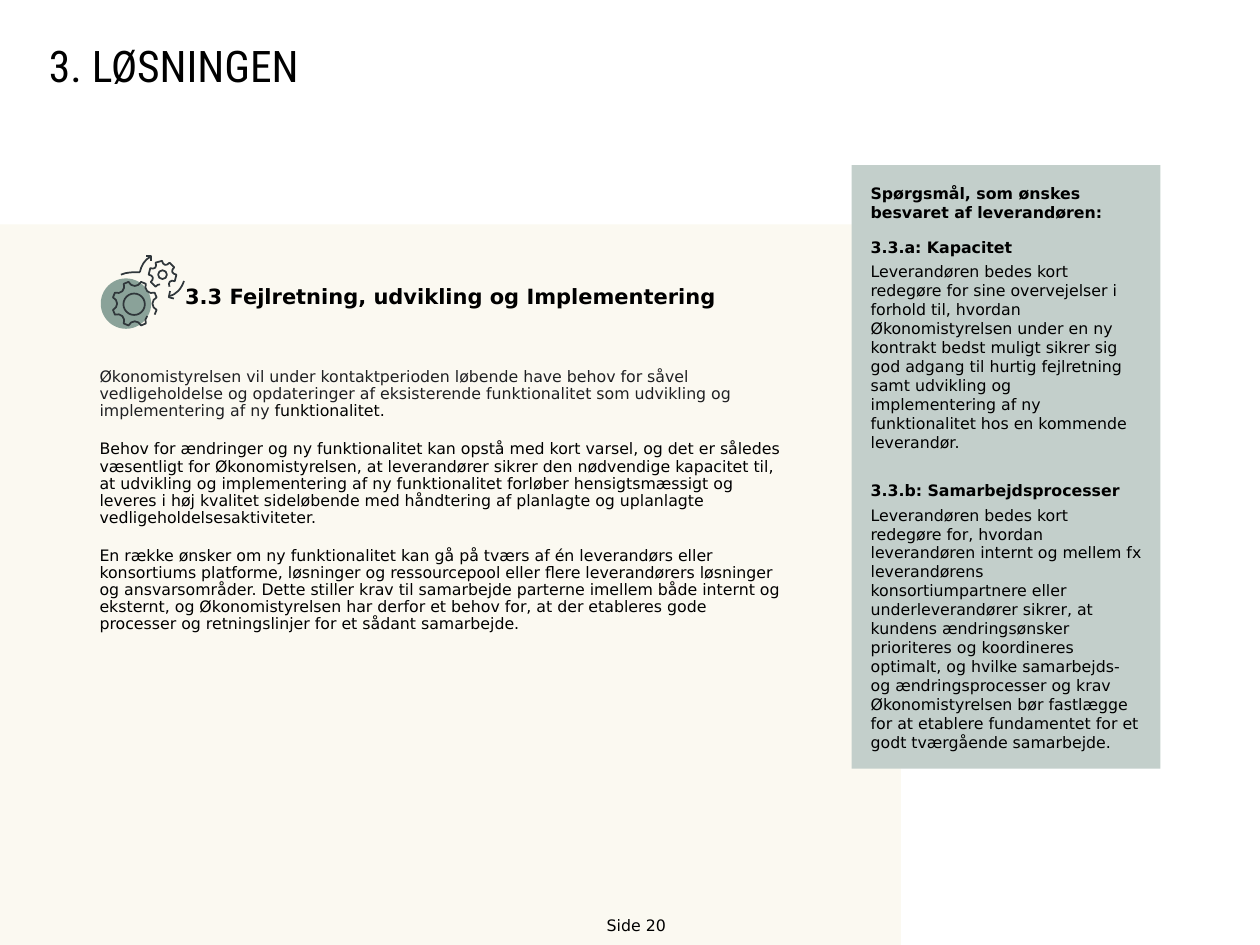
from math import cos, radians, sin

from lxml.etree import SubElement
from pptx import Presentation
from pptx.dml.color import RGBColor
from pptx.enum.shapes import MSO_SHAPE as Shape
from pptx.enum.text import MSO_ANCHOR as Anchor, PP_ALIGN as Align
from pptx.oxml.ns import qn
from pptx.util import Inches, Pt

BLACK = RGBColor(0x00, 0x00, 0x00)
CHARCOAL = RGBColor(0x1F, 0x20, 0x23)
SLATE = RGBColor(0x30, 0x37, 0x3B)
CREAM = RGBColor(0xFB, 0xF9, 0xF1)
MIST = RGBColor(0xC3, 0xCF, 0xCB)
SAGE = RGBColor(0x8A, 0xA2, 0x99)
BODY_FONT = "DejaVu Sans"

deck = Presentation()
deck.slide_width = Inches(10)
deck.slide_height = Inches(7.5)
page = deck.slides.add_slide(deck.slide_layouts[6])


def add_panel(kind, left, top, width, height, fill=None):
    panel = page.shapes.add_shape(
        kind, Inches(left), Inches(top), Inches(width), Inches(height)
    )
    panel.shadow.inherit = False
    if fill is None:
        panel.fill.background()
        panel.line.color.rgb = SLATE
        panel.line.width = Pt(1)
    else:
        panel.fill.solid()
        panel.fill.fore_color.rgb = fill
        panel.line.fill.background()
    return panel


def add_text(box, texts, size, font=BODY_FONT, inset=0.0, anchor=Anchor.TOP):
    frame = box.text_frame
    frame.word_wrap = True
    frame.vertical_anchor = anchor
    frame.margin_left = frame.margin_right = Inches(inset)
    frame.margin_top = frame.margin_bottom = Inches(inset)
    for index, text in enumerate(texts):
        para = frame.paragraphs[0] if index == 0 else frame.add_paragraph()
        para.text = text
        para.alignment = Align.LEFT
        para.font.name = font
        para.font.size = Pt(size)
        para.font.color.rgb = BLACK
    return frame


add_panel(Shape.RECTANGLE, 0, 1.78, 7.15, 5.72, CREAM)

title = page.shapes.add_textbox(Inches(0.29), Inches(0.38), Inches(8.73), Inches(0.75))
title_frame = add_text(
    title, ["3. LØSNINGEN"], 24.9, "Roboto Condensed", 0.1, Anchor.BOTTOM
)
title_frame.margin_top = Inches(0)
title_frame.margin_bottom = Inches(0.43)
title_frame.paragraphs[0].line_spacing = 0.9

sidebar = add_panel(Shape.RECTANGLE, 6.76, 1.31, 2.45, 4.79, MIST)
questions = [
    ("Spørgsmål, som ønskes besvaret af leverandøren:", True, 0),
    ("3.3.a: Kapacitet", True, 6),
    (
        "Leverandøren bedes kort redegøre for sine overvejelser i forhold til, "
        "hvordan Økonomistyrelsen under en ny kontrakt bedst muligt sikrer sig god "
        "adgang til hurtig fejlretning samt udvikling og implementering af ny "
        "funktionalitet hos en kommende leverandør.",
        False,
        0,
    ),
    ("3.3.b: Samarbejdsprocesser", True, 14),
    (
        "Leverandøren bedes kort redegøre for, hvordan leverandøren internt og "
        "mellem fx leverandørens konsortiumpartnere eller underleverandører sikrer, "
        "at kundens ændringsønsker prioriteres og koordineres optimalt, og hvilke "
        "samarbejds- og ændringsprocesser og krav Økonomistyrelsen bør fastlægge "
        "for at etablere fundamentet for et godt tværgående samarbejde.",
        False,
        0,
    ),
]
sidebar_frame = add_text(sidebar, [text for text, _, _ in questions], 9, inset=0.15)
for para, (_, bold, gap) in zip(sidebar_frame.paragraphs, questions):
    para.font.bold = bold
    para.space_after = Pt(3)
    if gap:
        para.space_before = Pt(gap)

heading = page.shapes.add_textbox(Inches(1.47), Inches(2.25), Inches(4.34), Inches(0.2))
heading_frame = add_text(
    heading, ["3.3 Fejlretning, udvikling og Implementering"], 12, anchor=Anchor.MIDDLE
)
heading_frame.paragraphs[0].font.bold = True

add_panel(Shape.OVAL, 0.8, 2.21, 0.4, 0.4, SAGE)

gears = [
    (1.07, 2.41, 0.18, 0.14, 45, 45, 70),
    (1.29, 2.18, 0.11, 0.08, 60, -256, 49),
]
outlines = []
for center_x, center_y, outer, inner, pitch, start, count in gears:
    middle = (inner + outer) / 2
    tooth = [(0, inner), (8, inner), (15, middle), (16, outer), (pitch / 2 - 2, outer)]
    tooth += [(pitch - offset, radius) for offset, radius in reversed(tooth[1:])]
    outline = []
    for index in range(count):
        turn, step = divmod(index, len(tooth))
        offset, radius = tooth[step]
        angle = radians(start + turn * pitch + offset)
        outline.append((center_x + radius * cos(angle), center_y + radius * sin(angle)))
    outlines.append(outline)

hole = []
for index in range(13):
    turn, step = divmod(index, 3)
    angle = radians(turn * 90 + (0, 29, 61)[step])
    radius = 0.04 if step else 0.035
    hole.append((1.29 + radius * cos(angle), 2.18 + radius * sin(angle)))

strokes = [
    ([outlines[0]], True),
    ([outlines[1], hole], True),
    ([[(1.16, 2.03), (1.2, 2.03), (1.2, 2.07)]], False),
    ([[(1.38, 2.37), (1.34, 2.36), (1.35, 2.31)]], False),
    ([[(1.46, 2.23), (1.44, 2.29), (1.4, 2.34), (1.34, 2.35)]], True),
    ([[(1.11, 2.16), (1.12, 2.11), (1.15, 2.06), (1.19, 2.04)]], True),
    ([[(0.96, 2.18), (1, 2.16), (1.06, 2.16), (1.11, 2.16)]], True),
]
for contours, curved in strokes:
    builder = None
    for contour in contours:
        points = [(Inches(x), Inches(y)) for x, y in contour]
        if builder is None:
            builder = page.shapes.build_freeform(*points[0])
        else:
            builder.move_to(*points[0])
        builder.add_line_segments(points[1:], close=False)
    drawing = builder.convert_to_shape()
    drawing.shadow.inherit = False
    drawing.fill.background()
    drawing.line.color.rgb = SLATE
    drawing.line.width = Pt(1)
    if curved:
        segments = list(drawing.element.iter(qn("a:lnTo")))
        for first in range(0, len(segments), 3):
            trio = segments[first : first + 3]
            bezier = SubElement(trio[0].getparent(), qn("a:cubicBezTo"))
            trio[0].addprevious(bezier)
            for segment in trio:
                bezier.append(segment[0])
                segment.getparent().remove(segment)

add_panel(Shape.OVAL, 0.98, 2.33, 0.17, 0.17)

footer = page.shapes.add_textbox(Inches(4.51), Inches(7.22), Inches(1.08), Inches(0.28))
footer_frame = add_text(footer, ["Side 20"], 9, inset=0.05)
footer_frame.paragraphs[0].alignment = Align.CENTER

body = page.shapes.add_textbox(Inches(0.79), Inches(2.93), Inches(5.42), Inches(2.63))
body_frame = add_text(
    body,
    [
        "Økonomistyrelsen vil under kontaktperioden løbende have behov for såvel "
        "vedligeholdelse og opdateringer af eksisterende funktionalitet som "
        "udvikling og implementering af ny ",
        "Behov for ændringer og ny funktionalitet kan opstå med kort varsel, og det "
        "er således væsentligt for Økonomistyrelsen, at leverandører sikrer den "
        "nødvendige kapacitet til, at udvikling og implementering af ny "
        "funktionalitet forløber hensigtsmæssigt og leveres i høj kvalitet "
        "sideløbende med håndtering af planlagte og uplanlagte "
        "vedligeholdelsesaktiviteter.",
        "En række ønsker om ny funktionalitet kan gå på tværs af én leverandørs "
        "eller konsortiums platforme, løsninger og ressourcepool eller flere "
        "leverandørers løsninger og ansvarsområder. Dette stiller krav til "
        "samarbejde parterne imellem både internt og eksternt, og Økonomistyrelsen "
        "har derfor et behov for, at der etableres gode processer og retningslinjer "
        "for et sådant samarbejde.",
    ],
    9,
)
for index, para in enumerate(body_frame.paragraphs):
    para.line_spacing = 0.9
    para.space_after = Pt(6)
    if index:
        para.space_before = Pt(6)
intro = body_frame.paragraphs[0]
intro.runs[0].font.color.rgb = CHARCOAL
span = intro.add_run()
span.text = "funktionalitet."
span.font.color.rgb = BLACK

deck.save("out.pptx")
